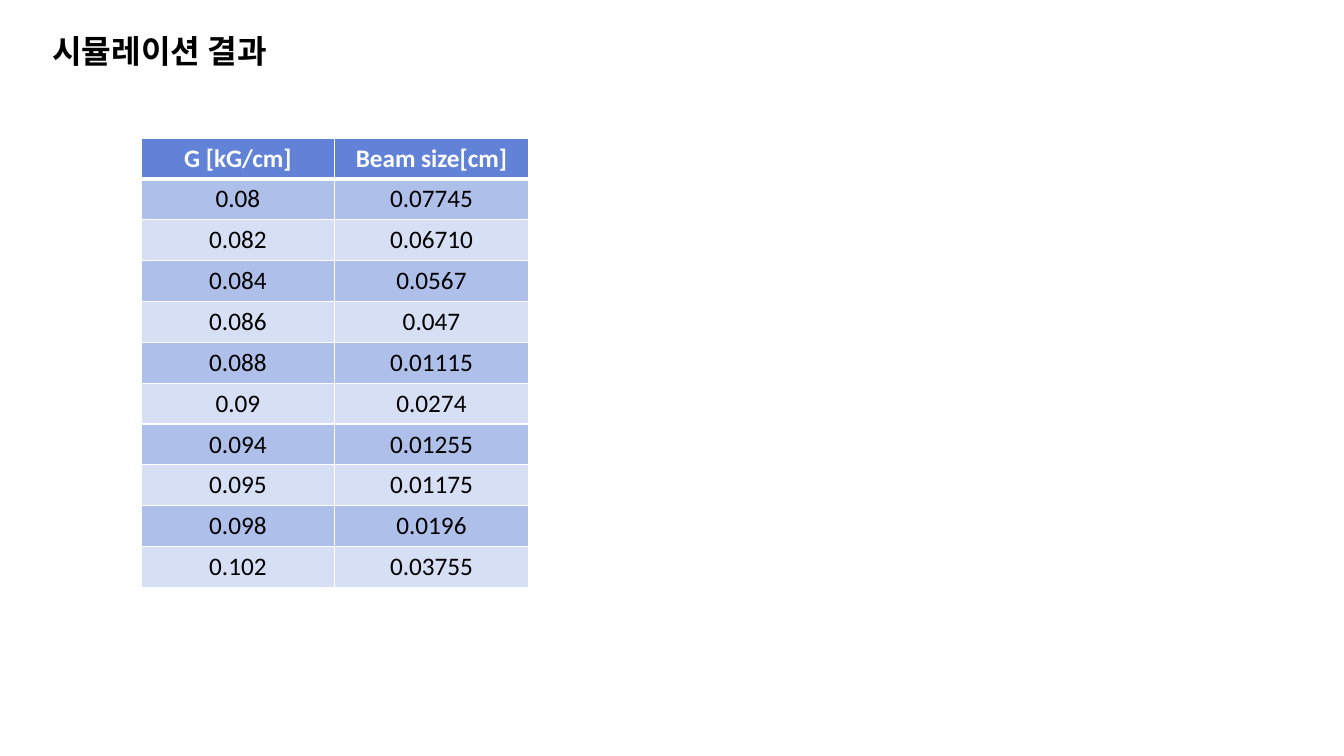
import dataclasses

import lxml.etree
import pptx
import pptx.dml.color
import pptx.enum.text
import pptx.oxml.ns
import pptx.table
import pptx.text.text
import pptx.util

Inches = pptx.util.Inches


@dataclasses.dataclass(frozen=True)
class Theme:
    font: str = "Calibri"
    title_size: float = 23
    table_size: float = 18
    text: str = "000000"
    white: str = "FFFFFF"
    header_fill: str = "6182D6"
    band_fills: tuple[str, str] = ("AEBFEA", "D7DFF4")
    border_width: float = 1
    header_border_width: float = 3


@dataclasses.dataclass(frozen=True)
class Measurement:
    gradient: str
    beam_size: str


THEME = Theme()
HEADER = Measurement("G [kG/cm]", "Beam size[cm]")
MEASUREMENTS = [
    Measurement("0.08", "0.07745"),
    Measurement("0.082", "0.06710"),
    Measurement("0.084", "0.0567"),
    Measurement("0.086", "0.047"),
    Measurement("0.088", "0.01115"),
    Measurement("0.09", "0.0274"),
    Measurement("0.094", "0.01255"),
    Measurement("0.095", "0.01175"),
    Measurement("0.098", "0.0196"),
    Measurement("0.102", "0.03755"),
]


def write_text(
    frame: pptx.text.text.TextFrame,
    text: str,
    *,
    size: float,
    color: str = THEME.text,
    bold: bool = False,
    alignment: pptx.enum.text.PP_ALIGN = pptx.enum.text.PP_ALIGN.LEFT,
) -> None:
    paragraph = frame.paragraphs[0]
    paragraph.alignment = alignment
    run = paragraph.add_run()
    run.text = text
    run.font.name = THEME.font
    run.font.size = pptx.util.Pt(size)
    run.font.bold = bold
    run.font.color.rgb = pptx.dml.color.RGBColor.from_string(color)


def set_borders(cell: pptx.table._Cell, top: float, bottom: float) -> None:
    """Draw white borders, with top and bottom widths in points."""
    qualified = pptx.oxml.ns.qn
    properties = cell._tc.get_or_add_tcPr()
    widths = {"lnL": THEME.border_width, "lnR": THEME.border_width, "lnT": top, "lnB": bottom}
    for position, (side, width) in enumerate(widths.items()):
        line = lxml.etree.Element(qualified(f"a:{side}"), w=str(int(pptx.util.Pt(width))))
        fill = lxml.etree.SubElement(line, qualified("a:solidFill"))
        lxml.etree.SubElement(fill, qualified("a:srgbClr"), val=THEME.white)
        properties.insert(position, line)


def add_title(slide: pptx.slide.Slide, text: str) -> None:
    title = slide.shapes.add_textbox(Inches(0.42), Inches(0.26), Inches(11.85), Inches(0.48))
    title.text_frame.word_wrap = True
    title.text_frame.auto_size = pptx.enum.text.MSO_AUTO_SIZE.SHAPE_TO_FIT_TEXT
    write_text(title.text_frame, text, size=THEME.title_size, bold=True)


def add_results_table(slide: pptx.slide.Slide, measurements: list[Measurement]) -> None:
    rows = [HEADER, *measurements]
    table = slide.shapes.add_table(
        len(rows), 2, Inches(1.4), Inches(1.37), Inches(3.84), Inches(4.46)
    ).table
    for row_index, row in enumerate(rows):
        is_header = row_index == 0
        fill = THEME.header_fill if is_header else THEME.band_fills[(row_index - 1) % 2]
        for column_index, text in enumerate(dataclasses.astuple(row)):
            cell = table.cell(row_index, column_index)
            cell.fill.solid()
            cell.fill.fore_color.rgb = pptx.dml.color.RGBColor.from_string(fill)
            set_borders(
                cell,
                top=THEME.header_border_width if row_index == 1 else THEME.border_width,
                bottom=THEME.header_border_width if is_header else THEME.border_width,
            )
            write_text(
                cell.text_frame,
                text,
                size=THEME.table_size,
                color=THEME.white if is_header else THEME.text,
                bold=is_header,
                alignment=pptx.enum.text.PP_ALIGN.CENTER,
            )


def main() -> None:
    presentation = pptx.Presentation()
    presentation.slide_width = Inches(13.33)
    presentation.slide_height = Inches(7.5)
    slide = presentation.slides.add_slide(presentation.slide_layouts[6])
    add_title(slide, "시뮬레이션 결과")
    add_results_table(slide, MEASUREMENTS)
    presentation.save("out.pptx")


if __name__ == "__main__":
    main()
